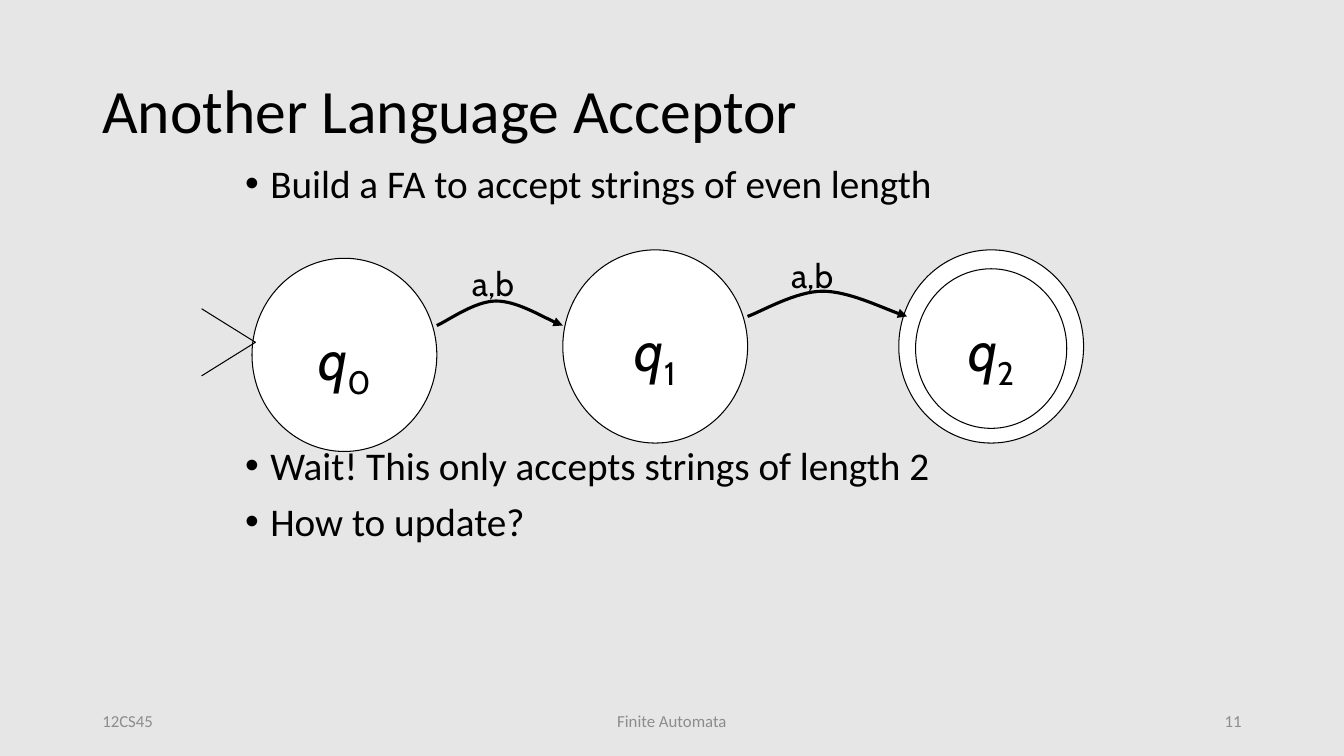
from lxml.etree import SubElement
from pptx import Presentation
from pptx.dml.color import RGBColor
from pptx.enum.shapes import MSO_SHAPE as Shape
from pptx.enum.text import MSO_ANCHOR as Anchor, PP_ALIGN as Align
from pptx.oxml.ns import qn
from pptx.util import Pt

BLACK, WHITE, GREY, BACKDROP = "000000", "FFFFFF", "8C8C8C", "E7E6E6"
STATE_W, STATE_H = 132, 138
RING_X, RING_Y = 12, 13.5
ARC = [(0, 1), (0.08, 0.83), (0.3, 0), (0.47, 0),
       (0.63, 0), (0.89, 0.8), (1, 1)]


def color(hex_code):
    return RGBColor.from_string(hex_code)


def style_run(run, size, font="Calibri", hex_code=BLACK):
    run.font.size = Pt(size)
    run.font.name = font
    run.font.color.rgb = color(hex_code)


def outline(shape, width):
    shape.shadow.inherit = False
    shape.line.color.rgb = color(BLACK)
    shape.line.width = Pt(width)


def add_text(slide, box, lines, size, font="Calibri", hex_code=BLACK,
             align=Align.LEFT, anchor=Anchor.MIDDLE, spacing=1.0):
    frame = slide.shapes.add_textbox(*map(Pt, box)).text_frame
    frame.text = "\n".join(lines)
    frame.word_wrap = True
    frame.vertical_anchor = anchor
    for paragraph in frame.paragraphs:
        paragraph.alignment = align
        paragraph.line_spacing = spacing
        style_run(paragraph.runs[0], size, font, hex_code)
    return frame


def add_bullets(slide, box, items):
    frame = add_text(slide, box, [words for words, _ in items], 28,
                     anchor=Anchor.TOP, spacing=0.9)
    for paragraph, (_, gap) in zip(frame.paragraphs, items):
        paragraph.space_before = Pt(gap)
        properties = paragraph._p.get_or_add_pPr()
        properties.set("marL", str(Pt(18)))
        properties.set("indent", str(-Pt(18)))
        SubElement(properties, qn("a:buFont"), typeface="Arial")
        SubElement(properties, qn("a:buChar"), char="•")


def add_circle(slide, left, top, width, height):
    circle = slide.shapes.add_shape(Shape.OVAL, *map(Pt, (left, top, width, height)))
    outline(circle, 0.75)
    return circle


def add_state(slide, left, top, index, accepting=False):
    state = add_circle(slide, left, top, STATE_W, STATE_H)
    state.fill.solid()
    state.fill.fore_color.rgb = color(WHITE)
    frame = state.text_frame
    frame.word_wrap = False
    frame.vertical_anchor = Anchor.MIDDLE
    paragraph = frame.paragraphs[0]
    paragraph.text = "q"
    paragraph.alignment = Align.CENTER
    paragraph.line_spacing = 1.2
    letter, subscript = paragraph.runs[0], paragraph.add_run()
    subscript.text = str(index)
    for run in (letter, subscript):
        style_run(run, 40, "Cabin")
    letter.font.italic = True
    subscript.font._element.set("baseline", "-25000")
    if accepting:
        ring = add_circle(slide, left + RING_X, top + RING_Y,
                          STATE_W - 2 * RING_X, 114)
        ring.fill.background()


def add_stroke(slide, points, width):
    start, *rest = [(Pt(x), Pt(y)) for x, y in points]
    builder = slide.shapes.build_freeform(*start)
    builder.add_line_segments(rest, close=False)
    stroke = builder.convert_to_shape()
    stroke.fill.background()
    outline(stroke, width)
    return stroke


def add_transition(slide, left, top, width, height, label_left, label_top):
    arc = add_stroke(slide, [(left + x * width, top + y * height) for x, y in ARC], 2.25)
    segments = arc._element.xpath(".//a:lnTo")
    outline_parent = segments[0].getparent()
    for first in range(0, len(segments), 3):
        curve = SubElement(outline_parent, qn("a:cubicBezTo"))
        for segment in segments[first:first + 3]:
            curve.append(segment[0])
            outline_parent.remove(segment)
    SubElement(arc.line._get_or_add_ln(), qn("a:tailEnd"), type="triangle")
    add_text(slide, (label_left, label_top, 60, 36), ["a,b"], 24, "Cabin",
             anchor=Anchor.TOP)


def add_automaton(slide, left, top):
    add_state(slide, left + 36, top + 6, 0)
    add_state(slide, left + 258, top, 1)
    add_state(slide, left + 498, top, 2, accepting=True)
    add_stroke(slide, [(left, top + 42), (left + 38.5, top + 66), (left, top + 90)], 0.75)
    add_transition(slide, left + 168, top + 36.5, 90, 17.5, left + 186, top + 6)
    add_transition(slide, left + 390, top + 29.5, 114, 18, left + 414, top)


def add_footer(slide, left, top, width, height):
    parts = [(0, 216, "12CS45", Align.LEFT),
             (252, 324, "Finite Automata", Align.CENTER),
             (width - 216, 216, "11", Align.RIGHT)]
    for offset, part_width, words, align in parts:
        add_text(slide, (left + offset, top, part_width, height), [words], 12,
                 hex_code=GREY, align=align)


def main():
    deck = Presentation()
    deck.slide_width, deck.slide_height = Pt(960), Pt(540)
    slide = deck.slides.add_slide(deck.slide_layouts[6])
    slide.background.fill.solid()
    slide.background.fill.fore_color.rgb = color(BACKDROP)
    add_text(slide, (66, 28.75, 828, 104.5), ["Another Language Acceptor"], 44, spacing=0.9)
    add_bullets(slide, (168, 114, 657, 368.5), [
        ("Build a FA to accept strings of even length", 10),
        ("Wait! This only accepts strings of length 2", 171),
        ("How to update?", 10),
    ])
    add_footer(slide, 66, 500.5, 828, 28.75)
    add_automaton(slide, 144, 178.5)
    deck.save("out.pptx")


if __name__ == "__main__":
    main()
